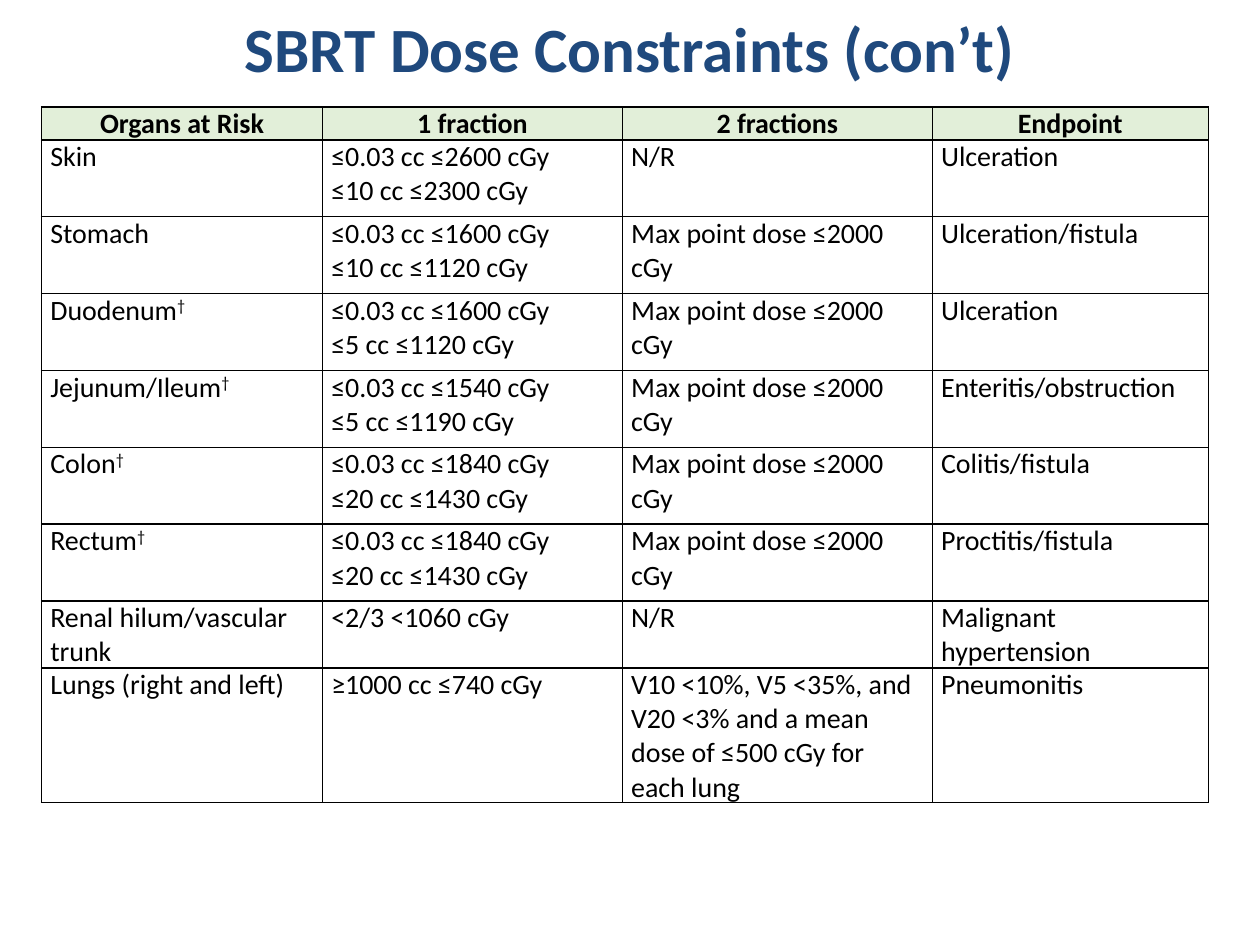
"""Build the SBRT dose constraints slide as a stack of aligned tables."""
from dataclasses import dataclass

from lxml import etree
from pptx import Presentation
from pptx.dml.color import RGBColor
from pptx.enum.text import MSO_ANCHOR, PP_ALIGN
from pptx.oxml.ns import qn
from pptx.util import Inches, Pt

CENTER = PP_ALIGN.CENTER
LEFT = PP_ALIGN.LEFT
MIDDLE = MSO_ANCHOR.MIDDLE
TOP = MSO_ANCHOR.TOP

TITLE = "SBRT Dose Constraints (con’t)"
DAGGER = "†"
MAX_POINT = "Max point dose ≤2000 cGy"
HEADER = [("Organs at Risk", "1 fraction", "2 fractions", "Endpoint")]
SKIN = [("Skin", "≤0.03 cc ≤2600 cGy\n≤10 cc ≤2300 cGy", "N/R", "Ulceration")]
DIGESTIVE = [
    ("Stomach", "≤0.03 cc ≤1600 cGy\n≤10 cc ≤1120 cGy", MAX_POINT, "Ulceration/fistula"),
    ("Duodenum†", "≤0.03 cc ≤1600 cGy\n≤5 cc ≤1120 cGy", MAX_POINT, "Ulceration"),
    ("Jejunum/Ileum†", "≤0.03 cc ≤1540 cGy\n≤5 cc ≤1190 cGy", MAX_POINT, "Enteritis/obstruction"),
    ("Colon†", "≤0.03 cc ≤1840 cGy\n≤20 cc ≤1430 cGy", MAX_POINT, "Colitis/fistula"),
    ("Rectum†", "≤0.03 cc ≤1840 cGy\n≤20 cc ≤1430 cGy", MAX_POINT, "Proctitis/fistula"),
]
RENAL = [("Renal hilum/vascular trunk", "<2/3 <1060 cGy", "N/R", "Malignant\nhypertension")]
LUNGS = [(
    "Lungs (right and left)",
    "≥1000 cc ≤740 cGy",
    "V10 <10%, V5 <35%, and V20 <3% and a mean dose of ≤500 cGy for each lung",
    "Pneumonitis",
)]
TABLES = [(HEADER, 0.26), (SKIN, 0.61), (DIGESTIVE, 0.61), (RENAL, 0.53), (LUNGS, 1.07)]

SLIDE_SIZE = (10, 7.5)
TITLE_BOX = (0.5, 0.04, 9, 0.67)
TABLE_LEFT, TABLE_TOP = 0.33, 0.85
COLUMN_WIDTHS = (2.23, 2.38, 2.46, 2.19)
CELL_INSET = 0.07


@dataclass(frozen=True)
class Theme:
    font: str = "Calibri"
    title_size: int = 36
    body_size: int = 16
    title_color: str = "1F497D"
    text_color: str = "000000"
    header_fill: str = "E2EFD9"
    border_color: str = "000000"
    border_width: int = 1


THEME = Theme()


def add_run(paragraph, text, size, color, bold=False):
    run = paragraph.add_run()
    run.text = text
    run.font.name = THEME.font
    run.font.size = Pt(size)
    run.font.bold = bold
    run.font.color.rgb = RGBColor.from_string(color)
    return run


def add_title(slide):
    frame = slide.shapes.add_textbox(*map(Inches, TITLE_BOX)).text_frame
    frame.word_wrap = True
    frame.vertical_anchor = MIDDLE
    paragraph = frame.paragraphs[0]
    paragraph.alignment = CENTER
    add_run(paragraph, TITLE, THEME.title_size, THEME.title_color, True)


def add_borders(cell):
    properties = cell._tc.get_or_add_tcPr()
    for side in ("a:lnL", "a:lnR", "a:lnT", "a:lnB"):
        line = etree.SubElement(properties, qn(side), w=str(Pt(THEME.border_width)))
        fill = etree.SubElement(line, qn("a:solidFill"))
        etree.SubElement(fill, qn("a:srgbClr"), val=THEME.border_color)


def fill_cell(cell, text, is_header):
    cell.margin_left = cell.margin_right = Inches(CELL_INSET)
    cell.margin_top = cell.margin_bottom = 0
    cell.vertical_anchor = MIDDLE if is_header else TOP
    add_borders(cell)
    if is_header:
        cell.fill.solid()
        cell.fill.fore_color.rgb = RGBColor.from_string(THEME.header_fill)
    else:
        cell.fill.background()
    frame = cell.text_frame
    for index, line in enumerate(text.split("\n")):
        paragraph = frame.add_paragraph() if index else frame.paragraphs[0]
        paragraph.alignment = CENTER if is_header else LEFT
        label, mark, _ = line.partition(DAGGER)
        add_run(paragraph, label, THEME.body_size, THEME.text_color, is_header)
        if mark:
            run = add_run(paragraph, mark, THEME.body_size, THEME.text_color)
            run._r.get_or_add_rPr().set("baseline", "30000")


def add_dose_table(slide, rows, top, row_height):
    table = slide.shapes.add_table(
        len(rows), len(COLUMN_WIDTHS), Inches(TABLE_LEFT), Inches(top),
        Inches(sum(COLUMN_WIDTHS)), Inches(row_height * len(rows)),
    ).table
    table.first_row = table.horz_banding = False
    for column, width in zip(table.columns, COLUMN_WIDTHS):
        column.width = Inches(width)
    for row, texts in zip(table.rows, rows):
        row.height = Inches(row_height)
        for cell, text in zip(row.cells, texts):
            fill_cell(cell, text, rows is HEADER)


def main():
    presentation = Presentation()
    presentation.slide_width, presentation.slide_height = map(Inches, SLIDE_SIZE)
    slide = presentation.slides.add_slide(presentation.slide_layouts[6])
    add_title(slide)
    top = TABLE_TOP
    for rows, row_height in TABLES:
        add_dose_table(slide, rows, top, row_height)
        top += row_height * len(rows)
    presentation.save("out.pptx")


if __name__ == "__main__":
    main()
